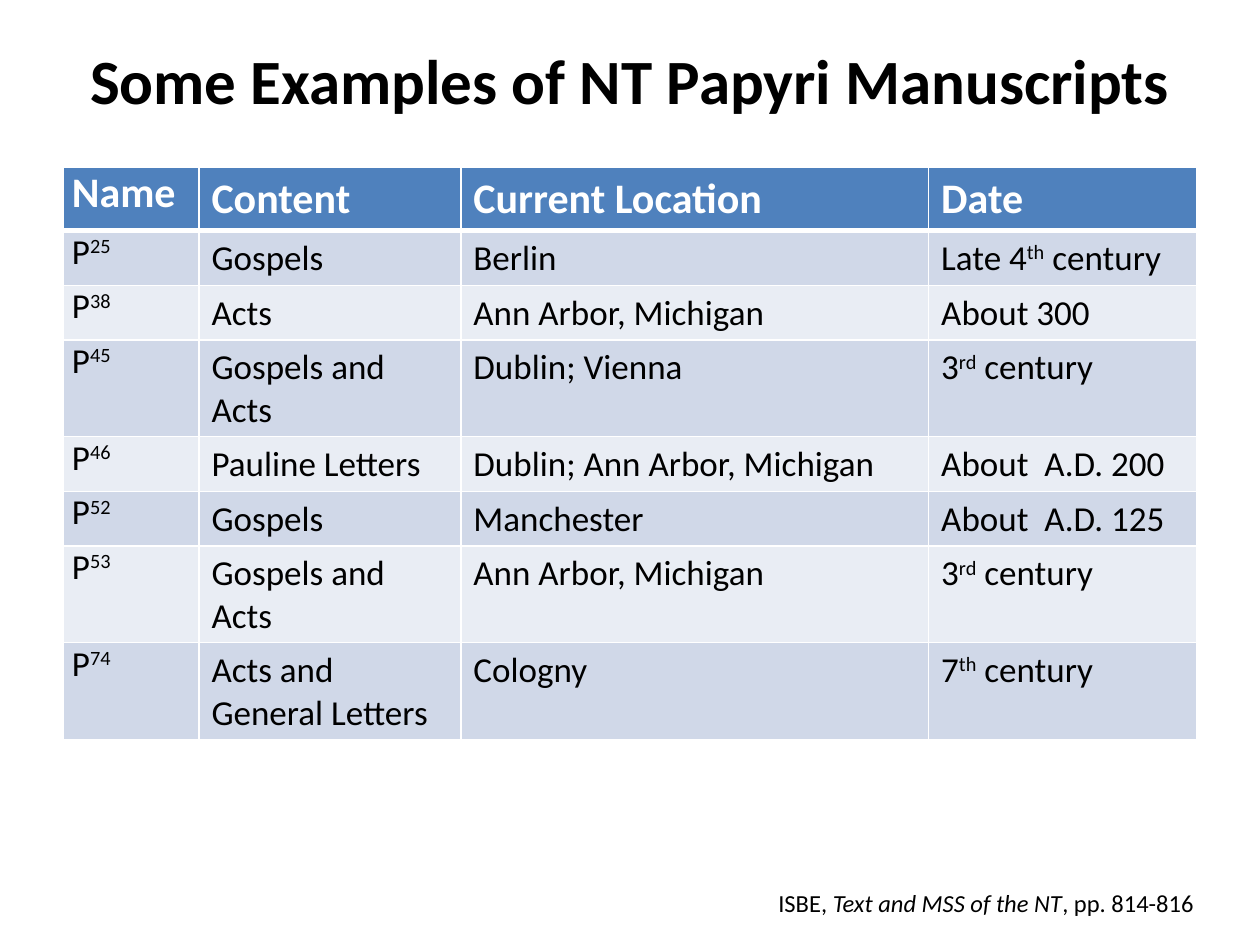
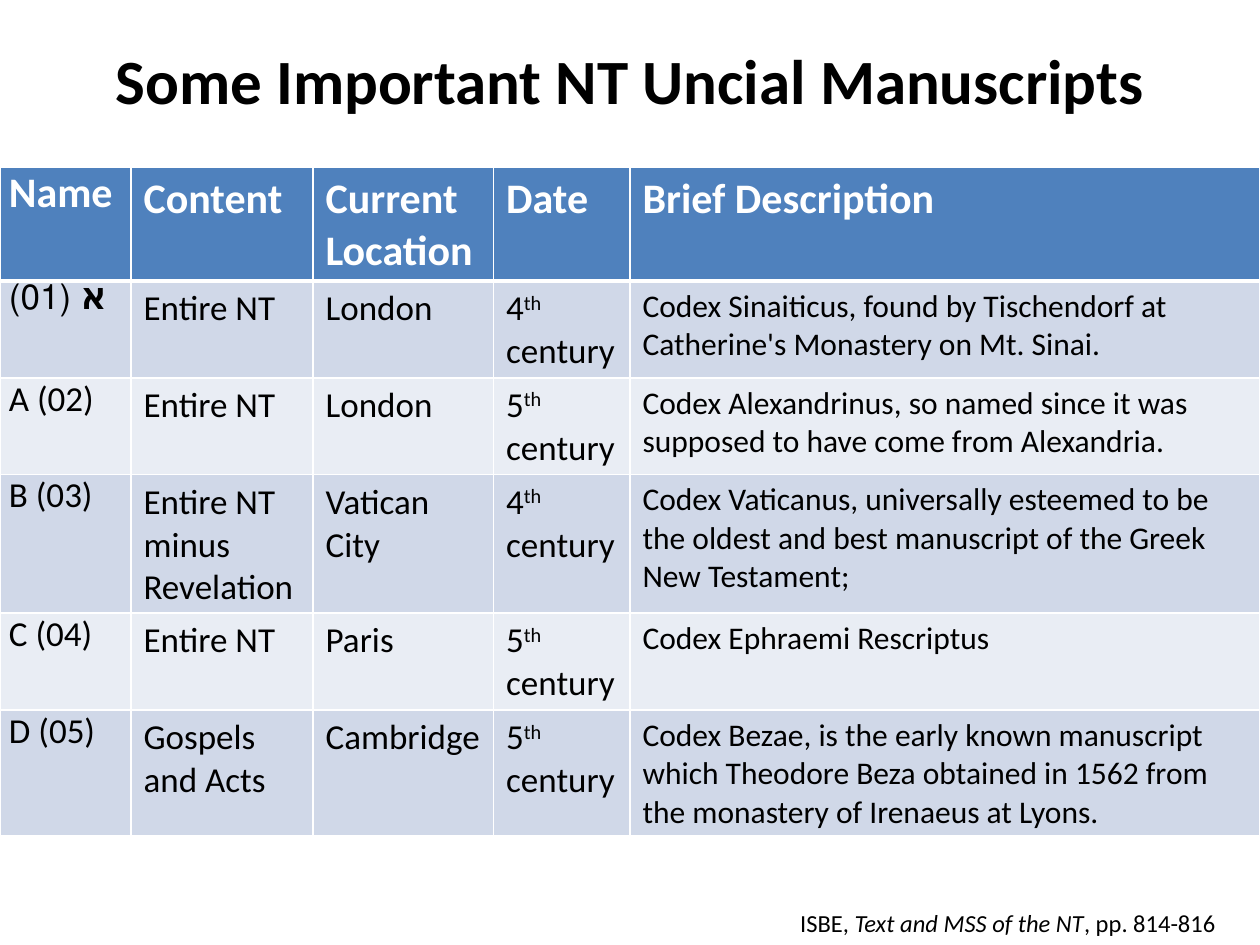
from dataclasses import dataclass

from lxml.etree import SubElement
from pptx import Presentation
from pptx.dml.color import RGBColor
from pptx.enum.text import MSO_ANCHOR, PP_ALIGN
from pptx.oxml.ns import qn
from pptx.util import Cm, Pt


@dataclass(frozen=True)
class Theme:
    font: str = "Calibri"
    hebrew_font: str = "Times New Roman"
    text: str = "000000"
    header_text: str = "FFFFFF"
    header_fill: str = "4F81BD"
    bands: tuple = ("D0D8E8", "E9EDF4")
    border: str = "FFFFFF"
    border_width: float = 1
    header_rule: float = 3
    title_size: int = 36
    header_size: int = 24
    body_size: int = 20
    description_size: int = 18
    source_size: int = 14


THEME = Theme()


def raised(base, superscript, rest=""):
    """Cell content with a superscript, as (text, style) spans."""
    return [(base, ""), (superscript, "super"), (rest, "")]


def century(number, suffix):
    return raised(number, suffix, " century")


SOURCE = [("ISBE, ", ""), ("Text and MSS of the NT", "italic"), (", pp. 814-816", "")]

# Table positions, column widths and source positions are in centimetres.
PAGES = [
    {
        "title": "Some Examples of NT Papyri Manuscripts",
        "table_left": 1.27,
        "columns": [2.74, 5.28, 9.43, 5.4],
        "source_at": (15.44, 17.78),
        "rows": [
            ["Name", "Content", "Current Location", "Date"],
            [raised("P", "25"), "Gospels", "Berlin", raised("Late 4", "th", " century")],
            [raised("P", "38"), "Acts", "Ann Arbor, Michigan", "About 300"],
            [raised("P", "45"), "Gospels and Acts", "Dublin; Vienna", century("3", "rd")],
            [raised("P", "46"), "Pauline Letters", "Dublin; Ann Arbor, Michigan",
             "About  A.D. 200"],
            [raised("P", "52"), "Gospels", "Manchester", "About  A.D. 125"],
            [raised("P", "53"), "Gospels and Acts", "Ann Arbor, Michigan",
             century("3", "rd")],
            [raised("P", "74"), "Acts and General Letters", "Cologny",
             century("7", "th")],
        ],
    },
    {
        "title": "Some Important NT Uncial Manuscripts",
        "table_left": 0,
        "columns": [2.64, 3.67, 3.64, 2.75, 12.7],
        "source_at": (15.88, 18.19),
        "rows": [
            ["Name", "Content", "Current Location", "Date", "Brief Description"],
            [[("א ", "hebrew"), ("(01)", "")], "Entire NT", "London", century("4", "th"),
             "Codex Sinaiticus, found by Tischendorf at Catherine's Monastery "
             "on Mt. Sinai."],
            ["A (02)", "Entire NT", "London", century("5", "th"),
             "Codex Alexandrinus, so named since it was supposed to have come "
             "from Alexandria."],
            ["B (03)", "Entire NT minus Revelation", "Vatican City", century("4", "th"),
             "Codex Vaticanus, universally esteemed to be the oldest and best "
             "manuscript of the Greek New Testament;"],
            ["C (04)", "Entire NT", "Paris", century("5", "th"),
             "Codex Ephraemi Rescriptus"],
            ["D (05)", "Gospels and Acts", "Cambridge", century("5", "th"),
             "Codex Bezae, is the early known manuscript which Theodore Beza "
             "obtained in 1562 from the monastery of Irenaeus at Lyons."],
        ],
    },
]

TABLE_TOP = 3.38
ROW_HEIGHT = 1.04
NAME_INSET = 0.18
DESCRIPTION_COLUMN = 4


def write(para, content, size, color=THEME.text, bold=False):
    """Fill a paragraph from a string or a list of (text, style) spans."""
    spans = [(content, "")] if isinstance(content, str) else content
    for text, style in spans:
        if not text:
            continue
        span = para.add_run()
        span.text = text
        font = span.font
        font.name = THEME.hebrew_font if style == "hebrew" else THEME.font
        font.size = Pt(size)
        font.bold = bold or style == "hebrew"
        font.italic = style == "italic"
        font.color.rgb = RGBColor.from_string(color)
        if style == "super":
            font._element.set("baseline", "30000")


def add_border(cell, side, width):
    line = SubElement(cell._tc.get_or_add_tcPr(), qn(f"a:ln{side}"), w=str(Pt(width)))
    fill = SubElement(line, qn("a:solidFill"))
    SubElement(fill, qn("a:srgbClr"), val=THEME.border)


def format_cell(cell, row, column):
    """Set borders, then the fill: the file format wants them in that order."""
    rules = {"L": THEME.border_width, "R": THEME.border_width,
             "T": THEME.header_rule if row == 1 else THEME.border_width,
             "B": THEME.header_rule if row == 0 else THEME.border_width}
    for side, width in rules.items():
        add_border(cell, side, width)
    cell.fill.solid()
    color = THEME.bands[(row - 1) % 2] if row else THEME.header_fill
    cell.fill.fore_color.rgb = RGBColor.from_string(color)
    if column == 0:
        cell.margin_left = cell.margin_right = Cm(NAME_INSET)
        cell.margin_top = cell.margin_bottom = 0


def add_title(page, title):
    box = page.shapes.add_textbox(Cm(1.27), 0, Cm(22.86), Cm(3.18))
    frame = box.text_frame
    frame.word_wrap = True
    frame.vertical_anchor = MSO_ANCHOR.MIDDLE
    para = frame.paragraphs[0]
    para.alignment = PP_ALIGN.CENTER
    write(para, title, THEME.title_size, bold=True)


def add_manuscripts(page, left, widths, rows):
    table = page.shapes.add_table(
        len(rows), len(widths), Cm(left), Cm(TABLE_TOP),
        Cm(sum(widths)), Cm(ROW_HEIGHT * len(rows))).table
    for column, width in zip(table.columns, widths):
        column.width = Cm(width)
    for r, contents in enumerate(rows):
        for c, content in enumerate(contents):
            cell = table.cell(r, c)
            format_cell(cell, r, c)
            para = cell.text_frame.paragraphs[0]
            if r == 0:
                write(para, content, THEME.header_size, THEME.header_text, bold=True)
            else:
                size = (THEME.description_size if c == DESCRIPTION_COLUMN
                        else THEME.body_size)
                write(para, content, size)


def add_source(page, left, top):
    box = page.shapes.add_textbox(Cm(left), Cm(top), Cm(8.94), Cm(0.86))
    box.text_frame.word_wrap = False
    write(box.text_frame.paragraphs[0], SOURCE, THEME.source_size)


def main():
    deck = Presentation()
    deck.slide_width, deck.slide_height = Cm(25.4), Cm(19.05)
    for content in PAGES:
        page = deck.slides.add_slide(deck.slide_layouts[6])
        add_title(page, content["title"])
        add_manuscripts(page, content["table_left"], content["columns"], content["rows"])
        add_source(page, *content["source_at"])
    deck.save("out.pptx")


if __name__ == "__main__":
    main()
